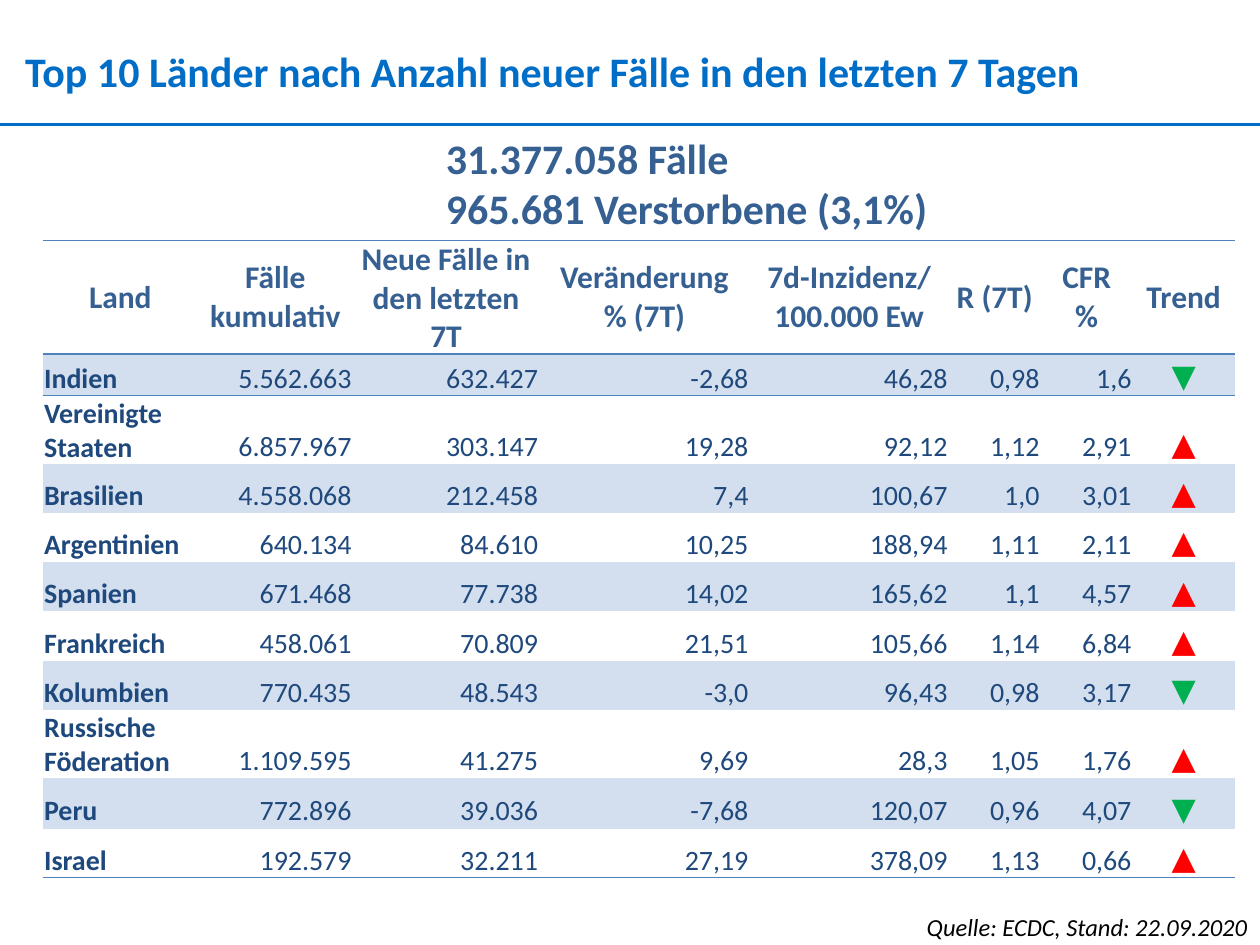
from pptx import Presentation
from pptx.dml.color import RGBColor
from pptx.enum.shapes import MSO_CONNECTOR
from pptx.enum.text import MSO_ANCHOR, PP_ALIGN
from pptx.oxml.ns import qn
from pptx.util import Inches, Pt
from lxml.etree import SubElement

BLUE, HEAD, BODY = "006EC7", "366092", "1F497D"
RULE, BAND = "4F81BD", "D3DFEE"
TREND_COLORS = {"▲": "FF0000", "▼": "00B050"}
NO_STYLE = "{2D5ABB26-0587-4C30-8999-92F81FD0307C}"
COL_WIDTHS = [1.23, 1.23, 1.48, 1.67, 1.58, 0.73, 0.73, 0.81]
ROW_HEIGHTS = [0.87, 0.33, 0.53] + [0.39] * 5 + [0.38, 0.4, 0.39]
HEADERS = ["Land", "Fälle kumulativ", "Neue Fälle in den letzten 7T", "Veränderung % (7T)",
           "7d-Inzidenz/ 100.000 Ew", "R (7T)", "CFR %", "Trend"]
COUNTRIES = [
    ["Indien", "5.562.663", "632.427", "-2,68", "46,28", "0,98", "1,6", "▼"],
    ["Vereinigte Staaten", "6.857.967", "303.147", "19,28", "92,12", "1,12", "2,91", "▲"],
    ["Brasilien", "4.558.068", "212.458", "7,4", "100,67", "1,0", "3,01", "▲"],
    ["Argentinien", "640.134", "84.610", "10,25", "188,94", "1,11", "2,11", "▲"],
    ["Spanien", "671.468", "77.738", "14,02", "165,62", "1,1", "4,57", "▲"],
    ["Frankreich", "458.061", "70.809", "21,51", "105,66", "1,14", "6,84", "▲"],
    ["Kolumbien", "770.435", "48.543", "-3,0", "96,43", "0,98", "3,17", "▼"],
    ["Russische Föderation", "1.109.595", "41.275", "9,69", "28,3", "1,05", "1,76", "▲"],
    ["Peru", "772.896", "39.036", "-7,68", "120,07", "0,96", "4,07", "▼"],
    ["Israel", "192.579", "32.211", "27,19", "378,09", "1,13", "0,66", "▲"],
]


def rgb(color):
    return RGBColor.from_string(color)


def write(tf, text, size, color, bold=False, italic=False, align=PP_ALIGN.LEFT):
    tf.text = text
    for p in tf.paragraphs:
        p.alignment = align
        for r in p.runs:
            r.font.name = "Calibri"
            r.font.size = Pt(size)
            r.font.bold = bold
            r.font.italic = italic
            r.font.color.rgb = rgb(color)


def set_margins(target, left, top, right, bottom):
    target.margin_left, target.margin_top = Inches(left), Inches(top)
    target.margin_right, target.margin_bottom = Inches(right), Inches(bottom)


def place(sp, left, top, width, height):
    sp.left, sp.top = Inches(left), Inches(top)
    sp.width, sp.height = Inches(width), Inches(height)


def add_title(s, text):
    sp = s.shapes.title
    place(sp, 0.2, 0.36, 9.63, 0.4)
    tf = sp.text_frame
    set_margins(tf, 0, 0, 0, 0)
    tf.vertical_anchor = MSO_ANCHOR.TOP
    write(tf, text, 24, BLUE, bold=True)


def add_text(s, box, text, size, color, wrap=True, **style):
    tf = s.shapes.add_textbox(*map(Inches, box)).text_frame
    tf.word_wrap = wrap
    write(tf, text, size, color, **style)


def add_rule(s, y):
    line = s.shapes.add_connector(MSO_CONNECTOR.STRAIGHT, 0, Inches(y), Inches(10), Inches(y))
    line.line.color.rgb = rgb(BLUE)
    line.line.width = Pt(1.5)
    SubElement(line._element.spPr, qn("a:effectLst"))


def add_border(cell, edge):
    ln = SubElement(cell._tc.get_or_add_tcPr(), qn(f"a:{edge}"), w=str(Pt(1)))
    fill = SubElement(ln, qn("a:solidFill"))
    SubElement(fill, qn("a:srgbClr"), val=RULE)


def style_header(cell, text):
    set_margins(cell, 0.06, 0, 0.06, 0)
    cell.vertical_anchor = MSO_ANCHOR.MIDDLE
    write(cell.text_frame, text, 18, HEAD, bold=True, align=PP_ALIGN.CENTER)


def style_body(cell, text, col):
    set_margins(cell, 0.01, 0.01, 0.01, 0)
    cell.vertical_anchor = MSO_ANCHOR.BOTTOM
    if text in TREND_COLORS:
        write(cell.text_frame, text, 18, TREND_COLORS[text], align=PP_ALIGN.CENTER)
    elif col == 0:
        write(cell.text_frame, text, 16, BODY, bold=True)
    else:
        write(cell.text_frame, text, 16, BODY, align=PP_ALIGN.RIGHT)


def add_country_table(s):
    rows = [HEADERS] + COUNTRIES
    frame = s.shapes.add_table(len(rows), len(HEADERS), Inches(0.34), Inches(1.91),
                               Inches(9.46), Inches(5.07))
    table = frame.table
    table.horz_banding = False
    table._tbl.tblPr.find(qn("a:tableStyleId")).text = NO_STYLE
    for column, width in zip(table.columns, COL_WIDTHS):
        column.width = Inches(width)
    for i, (values, height) in enumerate(zip(rows, ROW_HEIGHTS)):
        table.rows[i].height = Inches(height)
        for j, text in enumerate(values):
            cell = table.cell(i, j)
            if i == 0:
                style_header(cell, text)
            else:
                style_body(cell, text, j)
            if i in (0, 1):
                add_border(cell, "lnT")
            if i in (0, len(rows) - 1):
                add_border(cell, "lnB")
            if i % 2:
                cell.fill.solid()
                cell.fill.fore_color.rgb = rgb(BAND)
            else:
                cell.fill.background()


def main():
    prs = Presentation()
    prs.slide_width, prs.slide_height = Inches(10), Inches(7.5)
    s = prs.slides.add_slide(prs.slide_layouts[5])
    add_title(s, "Top 10 Länder nach Anzahl neuer Fälle in den letzten 7 Tagen")
    add_rule(s, 0.99)
    add_text(s, (3.44, 1, 4.06, 0.91), "31.377.058 Fälle\n965.681 Verstorbene (3,1%)",
             24, HEAD, wrap=False, bold=True)
    add_text(s, (6.46, 7.19, 3.54, 0.34), "Quelle: ECDC, Stand: 22.09.2020",
             14, "000000", italic=True, align=PP_ALIGN.RIGHT)
    add_country_table(s)
    prs.save("out.pptx")


if __name__ == "__main__":
    main()
